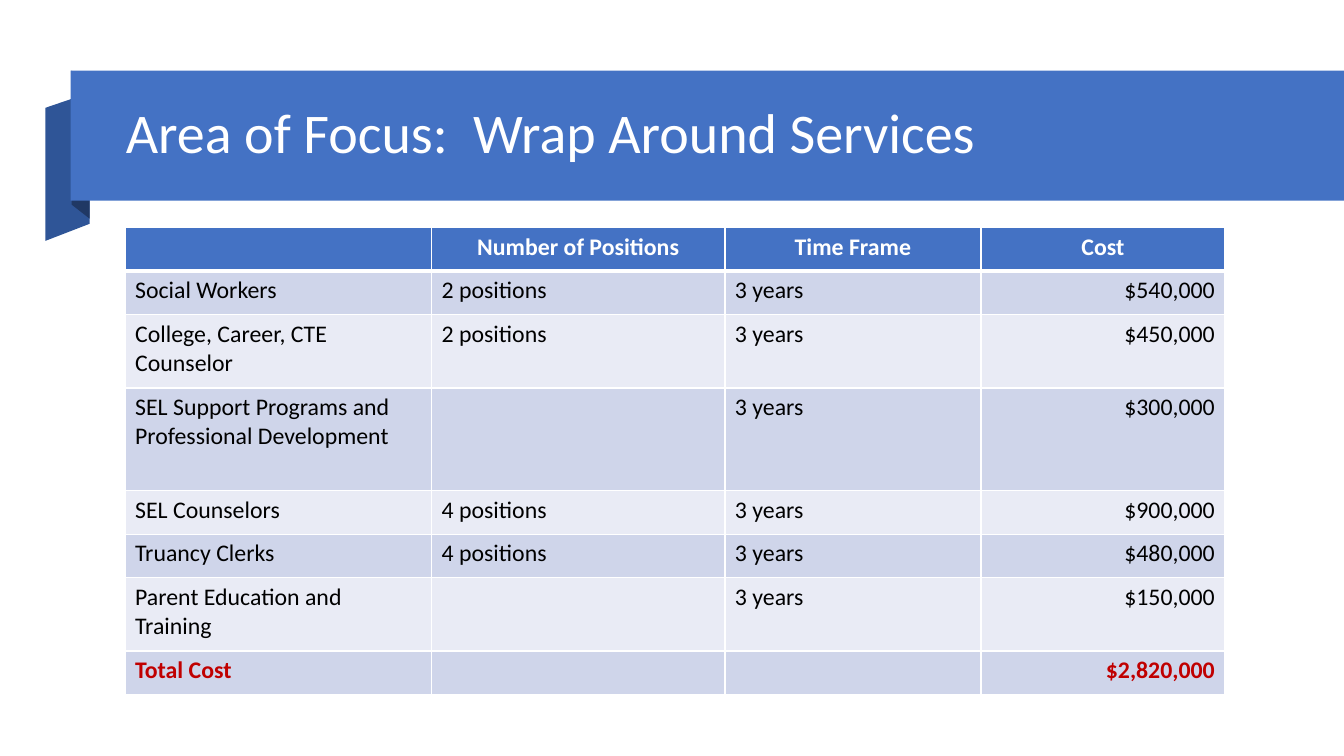
from lxml import etree
from pptx import Presentation
from pptx import util as u
from pptx.dml import color
from pptx.enum import shapes, text
from pptx.oxml import ns

BLUE, WHITE, BLACK, RED = "4472C4", "FFFFFF", "000000", "C00000"
BANDS = ("CFD5EA", "E9EBF5")
LEFT, CENTER, RIGHT = text.PP_ALIGN.LEFT, text.PP_ALIGN.CENTER, text.PP_ALIGN.RIGHT

COLUMNS = (3.04, 2.91, 2.54, 2.42)
ROW_HEIGHTS = (0.43, 0.43, 0.73, 1.02, 0.43, 0.43, 0.73, 0.43)
ROWS = (
    ("", "Number of Positions", "Time Frame", "Cost"),
    ("Social Workers", "2 positions", "3 years", "$540,000"),
    ("College, Career, CTE Counselor", "2 positions", "3 years", "$450,000"),
    ("SEL Support Programs and Professional Development", "", "3 years", "$300,000"),
    ("SEL Counselors", "4 positions", "3 years", "$900,000"),
    ("Truancy Clerks", "4 positions", "3 years", "$480,000"),
    ("Parent Education and Training", "", "3 years", "$150,000"),
    ("Total Cost", "", "", "$2,820,000"),
)
RIBBON_TAIL = ((0.89, 2.22), (0.45, 2.39), (0.45, 1.07), (0.89, 0.92))
RIBBON_FOLD = ((0.89, 2.17), (0.71, 2.03), (0.71, 0.7), (0.89, 0.85))


def rgb(value):
    return color.RGBColor.from_string(value)


class Deck:
    font = "Calibri"

    def __init__(self, prs):
        self.s = prs.slides.add_slide(prs.slide_layouts[6])

    def paint(self, sp, fill):
        sp.shadow.inherit = False
        sp.fill.solid()
        sp.fill.fore_color.rgb = rgb(fill)
        sp.line.fill.background()

    def outline(self, points, fill):
        inches = [(u.Inches(x), u.Inches(y)) for x, y in points]
        builder = self.s.shapes.build_freeform(*inches[0])
        builder.add_line_segments(inches[1:], close=True)
        self.paint(builder.convert_to_shape(), fill)

    def bar(self, box, fill):
        sp = self.s.shapes.add_shape(shapes.MSO_SHAPE.RECTANGLE, *map(u.Inches, box))
        self.paint(sp, fill)

    def add_words(self, p, words, size, fill, bold=False):
        r = p.add_run()
        r.text = words
        style = {"name": self.font, "size": u.Pt(size), "bold": bold}
        for key, value in style.items():
            setattr(r.font, key, value)
        r.font.color.rgb = rgb(fill)

    def title(self, box, words):
        tf = self.s.shapes.add_textbox(*map(u.Inches, box)).text_frame
        layout = {"word_wrap": True, "vertical_anchor": text.MSO_ANCHOR.MIDDLE}
        for key, value in layout.items():
            setattr(tf, key, value)
        p = tf.paragraphs[0]
        p.line_spacing = 0.9
        self.add_words(p, words, 40, WHITE)

    def borders(self, cell, top, bottom):
        tc_pr = cell._tc.get_or_add_tcPr()
        for side, width in {"L": 1, "R": 1, "T": top, "B": bottom}.items():
            ln = etree.SubElement(tc_pr, ns.qn(f"a:ln{side}"), w=str(u.Pt(width)))
            solid = etree.SubElement(ln, ns.qn("a:solidFill"))
            etree.SubElement(solid, ns.qn("a:srgbClr"), val=WHITE)

    def table(self, left, top):
        box = (left, top, sum(COLUMNS), sum(ROW_HEIGHTS))
        frame = self.s.shapes.add_table(len(ROWS), len(COLUMNS), *map(u.Inches, box))
        table = frame.table
        for column, width in zip(table.columns, COLUMNS):
            column.width = u.Inches(width)
        for i, (row, height) in enumerate(zip(table.rows, ROW_HEIGHTS)):
            row.height = u.Inches(height)
            header, total = i == 0, i == len(ROWS) - 1
            ink = WHITE if header else RED if total else BLACK
            for j, (cell, words) in enumerate(zip(row.cells, ROWS[i])):
                self.borders(cell, 3 if i == 1 else 1, 3 if header else 1)
                cell.fill.solid()
                cell.fill.fore_color.rgb = rgb(BLUE if header else BANDS[(i - 1) % 2])
                if words:
                    p = cell.text_frame.paragraphs[0]
                    p.alignment = CENTER if header else RIGHT if j == 3 else LEFT
                    self.add_words(p, words, 17, ink, header or total)


def main():
    prs = Presentation()
    prs.slide_width, prs.slide_height = u.Inches(13.33), u.Inches(7.5)
    deck = Deck(prs)
    deck.outline(RIBBON_TAIL, "2F5597")
    deck.outline(RIBBON_FOLD, "203864")
    deck.bar((0.7, 0.7, 12.63, 1.29), BLUE)
    deck.title((1.15, 0.86, 11.27, 0.96), "Area of Focus:  Wrap Around Services")
    deck.table(1.24, 2.26)
    prs.save("out.pptx")


if __name__ == "__main__":
    main()
